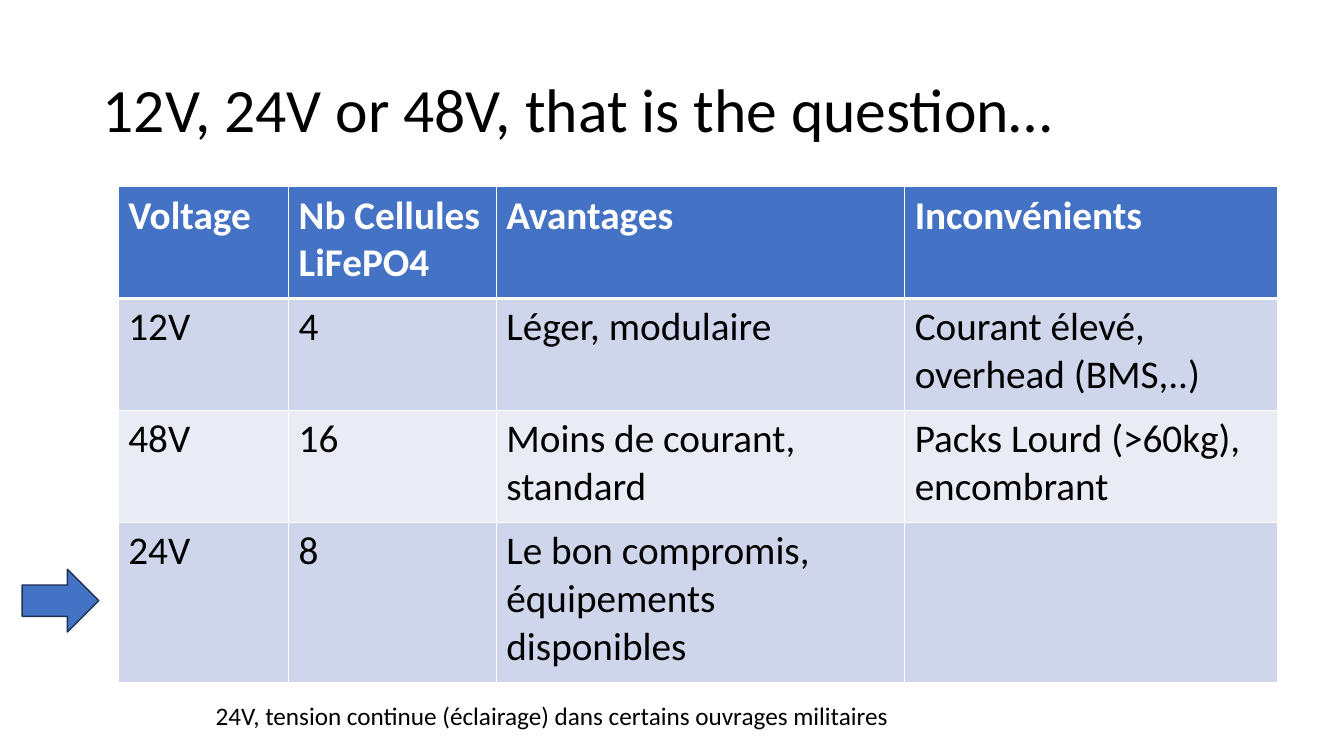
from dataclasses import dataclass

from lxml import etree
from pptx import Presentation
from pptx.dml.color import RGBColor
from pptx.enum.shapes import MSO_SHAPE
from pptx.enum.text import MSO_ANCHOR, MSO_AUTO_SIZE, PP_ALIGN
from pptx.oxml.ns import qn
from pptx.util import Inches, Pt

ARROW = MSO_SHAPE.RIGHT_ARROW
MIDDLE = MSO_ANCHOR.MIDDLE
LEFT = PP_ALIGN.LEFT
FIT_SHAPE = MSO_AUTO_SIZE.SHAPE_TO_FIT_TEXT
NO_FIT = MSO_AUTO_SIZE.NONE
TITLE_ONLY = 5
WIDTH, HEIGHT = 13.33, 7.5


@dataclass(frozen=True)
class Theme:
    font: str = "Calibri"
    title: int = 44
    table: int = 28
    note: int = 18
    text: str = "000000"
    white: str = "FFFFFF"
    accent: str = "4472C4"
    outline: str = "1E3256"
    bands: tuple = ("CFD5EA", "E9EBF5")
    rule: int = 1
    header_rule: int = 3


THEME = Theme()
COLUMNS = (1.69, 2.06, 4.05, 3.7)
ROWS = (1.11, 1.11, 1.11, 1.59)
VOLTAGES = (
    ("Voltage", "Nb Cellules LiFePO4", "Avantages", "Inconvénients"),
    ("12V", "4", "Léger, modulaire", "Courant élevé, overhead (BMS,..)"),
    ("48V", "16", "Moins de courant, standard", "Packs Lourd (>60kg), encombrant"),
    ("24V", "8", "Le bon compromis, équipements disponibles", ""),
)


def rgb(value):
    return RGBColor.from_string(value)


def box(left, top, width, height):
    """Turn shares of the slide's size into lengths."""
    return [Inches(share * side) for share, side in
            zip((left, top, width, height), (WIDTH, HEIGHT) * 2)]


def set_format(obj, **values):
    for name, value in values.items():
        setattr(obj, name, value)


def write(tf, text, size, color=THEME.text, bold=False):
    p = tf.paragraphs[0]
    p.alignment = LEFT
    r = p.add_run()
    r.text = text
    set_format(r.font, name=THEME.font, size=Pt(size), bold=bold)
    r.font.color.rgb = rgb(color)
    return p


def set_borders(cell, bottom):
    tcPr = cell._tc.get_or_add_tcPr()
    widths = {"lnL": THEME.rule, "lnR": THEME.rule, "lnT": THEME.rule, "lnB": bottom}
    for i, (tag, width) in enumerate(widths.items()):
        ln = etree.Element(qn(f"a:{tag}"), w=str(Pt(width)))
        fill = etree.SubElement(ln, qn("a:solidFill"))
        etree.SubElement(fill, qn("a:srgbClr"), val=THEME.white)
        tcPr.insert(i, ln)


def add_title(slide, text, area):
    sp = slide.shapes.title
    set_format(sp, **dict(zip(("left", "top", "width", "height"), area)))
    tf = sp.text_frame
    set_format(tf, vertical_anchor=MIDDLE, word_wrap=True, auto_size=NO_FIT)
    write(tf, text, THEME.title).line_spacing = 0.9


def add_voltage_table(slide, area):
    table = slide.shapes.add_table(len(ROWS), len(COLUMNS), *area).table
    for column, width in zip(table.columns, COLUMNS):
        column.width = Inches(width)
    for i, (row, height, texts) in enumerate(zip(table.rows, ROWS, VOLTAGES)):
        row.height = Inches(height)
        header = i == 0
        # Header in the accent colour, then alternating bands
        fill = THEME.accent if header else THEME.bands[(i - 1) % 2]
        for cell, text in zip(row.cells, texts):
            cell.fill.solid()
            cell.fill.fore_color.rgb = rgb(fill)
            set_borders(cell, THEME.header_rule if header else THEME.rule)
            if text:
                write(cell.text_frame, text, THEME.table,
                      THEME.white if header else THEME.text, header)


def add_arrow(slide, area):
    sp = slide.shapes.add_shape(ARROW, *area)
    sp.shadow.inherit = False
    sp.fill.solid()
    sp.fill.fore_color.rgb = rgb(THEME.accent)
    sp.line.color.rgb = rgb(THEME.outline)
    sp.line.width = Pt(1)


def add_note(slide, text, area):
    tf = slide.shapes.add_textbox(*area).text_frame
    set_format(tf, word_wrap=False, auto_size=FIT_SHAPE)
    write(tf, text, THEME.note)


def main():
    prs = Presentation()
    set_format(prs, slide_width=Inches(WIDTH), slide_height=Inches(HEIGHT))
    slide = prs.slides.add_slide(prs.slide_layouts[TITLE_ONLY])

    # Title and comparison table
    add_title(slide, "12V, 24V or 48V, that is the question…",
              box(0.069, 0.053, 0.863, 0.193))
    add_voltage_table(slide, box(0.088, 0.247, 0.863, 0.656))

    # Pointer to the chosen voltage, and the note below
    add_arrow(slide, box(0.0165, 0.753, 0.057, 0.083))
    add_note(slide, "24V, tension continue (éclairage) dans certains ouvrages militaires",
             box(0.153, 0.92, 0.519, 0.053))

    prs.save("out.pptx")


if __name__ == "__main__":
    main()
